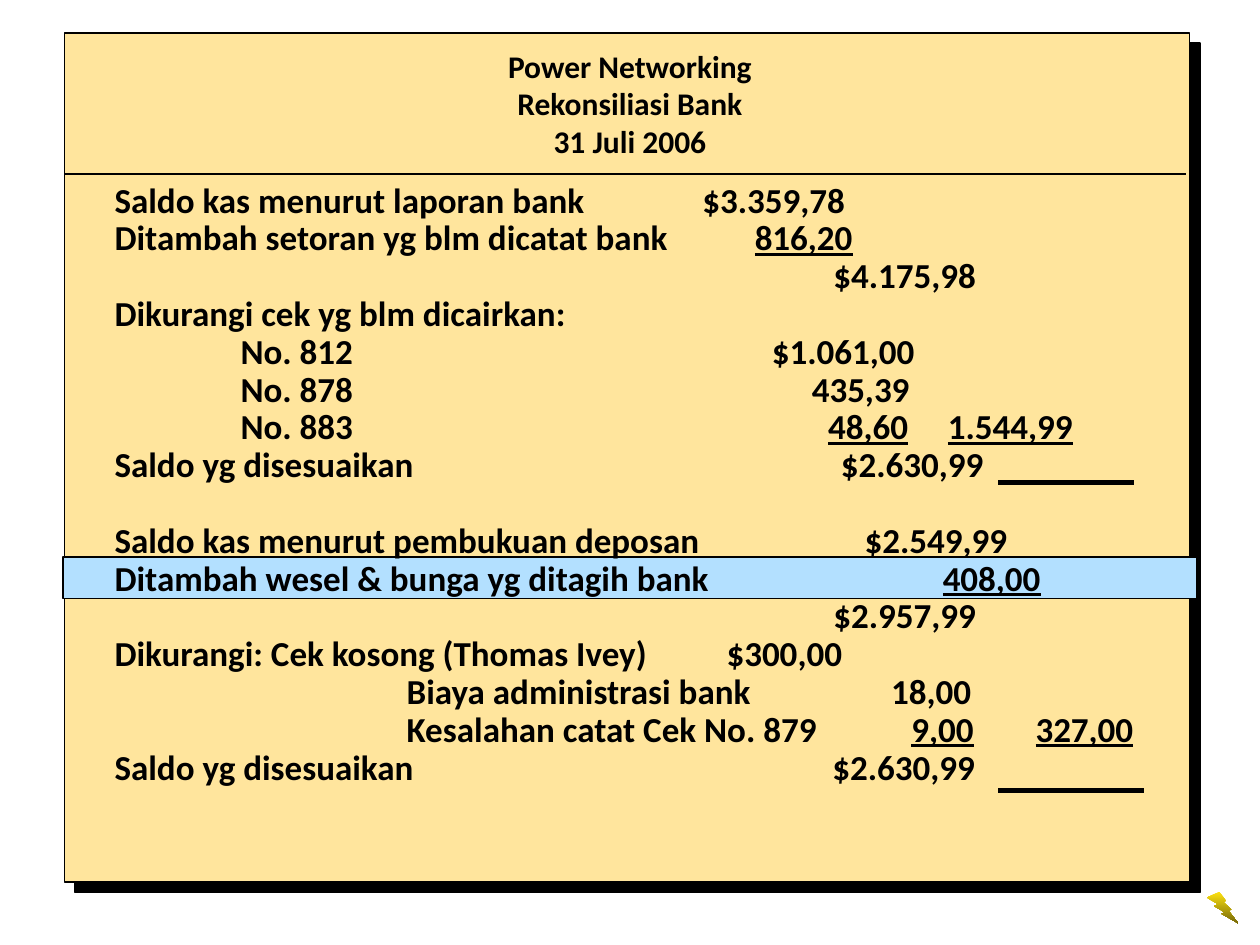
from lxml.etree import SubElement
from pptx import Presentation
from pptx.dml.color import RGBColor
from pptx.enum.shapes import MSO_CONNECTOR, MSO_SHAPE
from pptx.enum.text import MSO_ANCHOR, PP_ALIGN
from pptx.oxml.ns import qn
from pptx.util import Cm, Pt

COLOURS = {"ink": "000000", "paper": "FFE59D", "band": "B3E0FF",
           "bolt_top": "FDE111", "bolt_bottom": "756808"}
FONT = "Calibri"
HEADING = ["Power Networking", "Rekonsiliasi Bank", "31 Juli 2006"]

# label, label indent, amounts; each amount: text, right edge, start of its underline
# (all positions in cm from the left edge of the text)
SECTIONS = [
    [
        ("Saldo kas menurut laporan bank", 0, [("$3.359,78", 14.73, None)]),
        ("Ditambah setoran yg blm dicatat bank", 0, [("816,20", 14.88, 12.14)]),
        ("", 0, [("$4.175,98", 17.37, None)]),
        ("Dikurangi cek yg blm dicairkan:", 0, []),
        ("No. 812", 2.54, [("$1.061,00", 16.13, None)]),
        ("No. 878", 2.54, [("435,39", 16.03, None)]),
        ("No. 883", 2.54, [("48,60", 16, 13.3), ("1.544,99", 19.32, 16.5)]),
        ("Saldo yg disesuaikan", 0, [("$2.630,99", 17.52, None)]),
    ],
    [
        ("Saldo kas menurut pembukuan deposan", 0, [("$2.549,99", 18, None)]),
        ("Ditambah wesel & bunga yg ditagih bank", 0, [("408,00", 18.67, 15.74)]),
        ("", 0, [("$2.957,99", 17.37, None)]),
        ("Dikurangi: Cek kosong (Thomas Ivey)", 0, [("$300,00", 14.67, None)]),
        ("Biaya administrasi bank", 5.89, [("18,00", 17.27, None)]),
        ("Kesalahan catat Cek No. 879", 5.89,
         [("9,00", 17.32, 15.08), ("327,00", 20.54, 17.78)]),
        ("Saldo yg disesuaikan", 0, [("$2.630,99", 17.35, None)]),
    ],
]

# left, right, height on the page (cm), width (pt)
RULES = [(1.3, 23.9, 3.51, 1), (20.12, 23.06, 15.93, 3), (20.12, 22.86, 9.73, 3)]


def colour(name):
    return RGBColor.from_string(COLOURS[name])


def add_panel(page, area, fill, line_width):
    panel = page.shapes.add_shape(MSO_SHAPE.RECTANGLE, *map(Cm, area))
    panel.shadow.inherit = False
    panel.fill.solid()
    panel.fill.fore_color.rgb = colour(fill)
    panel.line.color.rgb = colour("ink")
    panel.line.width = Pt(line_width)
    return panel


def add_hard_shadow(shape):
    effects = shape._element.spPr.find(qn("a:effectLst"))
    shadow = SubElement(effects, qn("a:outerShdw"), dist=str(Pt(8.5)),
                        dir="2700000", algn="ctr", rotWithShape="0")
    SubElement(shadow, qn("a:srgbClr"), val=COLOURS["ink"])


def add_rule(page, left, right, top, width):
    rule = page.shapes.add_connector(
        MSO_CONNECTOR.STRAIGHT, Cm(left), Cm(top), Cm(right), Cm(top))
    rule.line.color.rgb = colour("ink")
    rule.line.width = Pt(width)
    SubElement(rule._element.spPr, qn("a:effectLst"))


def add_bolt(page):
    bolt = page.shapes.add_shape(
        MSO_SHAPE.LIGHTNING_BOLT, Cm(24.33), Cm(17.98), Cm(0.64), Cm(0.64))
    bolt.shadow.inherit = False
    bolt.line.fill.background()
    bolt.fill.gradient()
    bolt.fill.gradient_angle = 270
    for stop, name in zip(bolt.fill.gradient_stops, ("bolt_top", "bolt_bottom")):
        stop.color.rgb = colour(name)


def add_text_frame(page, area, anchor):
    frame = page.shapes.add_textbox(*map(Cm, area)).text_frame
    frame.word_wrap = True
    frame.vertical_anchor = anchor
    return frame


def add_span(para, text, size, underline=False):
    span = para.add_run()
    span.text = text
    span.font.name = FONT
    span.font.size = Pt(size)
    span.font.bold = True
    span.font.underline = underline
    span.font.color.rgb = colour("ink")


def add_heading(page):
    frame = add_text_frame(page, (5.08, 0.74, 15.24, 2.69), MSO_ANCHOR.MIDDLE)
    para = frame.paragraphs[0]
    para.alignment = PP_ALIGN.CENTER
    for index, text in enumerate(HEADING):
        if index:
            para.add_line_break()
        add_span(para, text, 18)


def fill_row(para, label, indent, amounts):
    """Write the label and its amounts, with a tab stop for each edge."""
    stops = []
    if indent:
        stops.append((indent, "l"))
        label = "\t" + label
    if label:
        add_span(para, label, 20)
    for text, right, rule_start in amounts:
        if rule_start:
            stops.append((rule_start, "l"))
            add_span(para, "\t", 20)
        stops.append((right, "r"))
        add_span(para, "\t" + text, 20, underline=bool(rule_start))
    if stops:
        tabs = SubElement(para._p.get_or_add_pPr(), qn("a:tabLst"))
        for place, align in stops:
            SubElement(tabs, qn("a:tab"), pos=str(Cm(place)), algn=align)


def add_statement(page):
    frame = add_text_frame(page, (2.06, 3.56, 21.64, 12.95), MSO_ANCHOR.TOP)
    para = None
    for section in SECTIONS:
        for index, row in enumerate(section):
            starts_later_section = para is not None and index == 0
            para = frame.paragraphs[0] if para is None else frame.add_paragraph()
            para.line_spacing = 0.9
            para.space_before = Pt(21.6 if starts_later_section else 0)
            fill_row(para, *row)


def main():
    deck = Presentation()
    deck.slide_width, deck.slide_height = Cm(25.4), Cm(19.05)
    page = deck.slides.add_slide(deck.slide_layouts[6])
    add_hard_shadow(add_panel(page, (1.3, 0.66, 22.68, 17.12), "paper", 1))
    add_heading(page)
    for rule in RULES:
        add_rule(page, *rule)
    add_bolt(page)
    add_panel(page, (1.27, 11.23, 22.86, 0.84), "band", 0.75)
    add_statement(page)
    deck.save("out.pptx")


if __name__ == "__main__":
    main()
